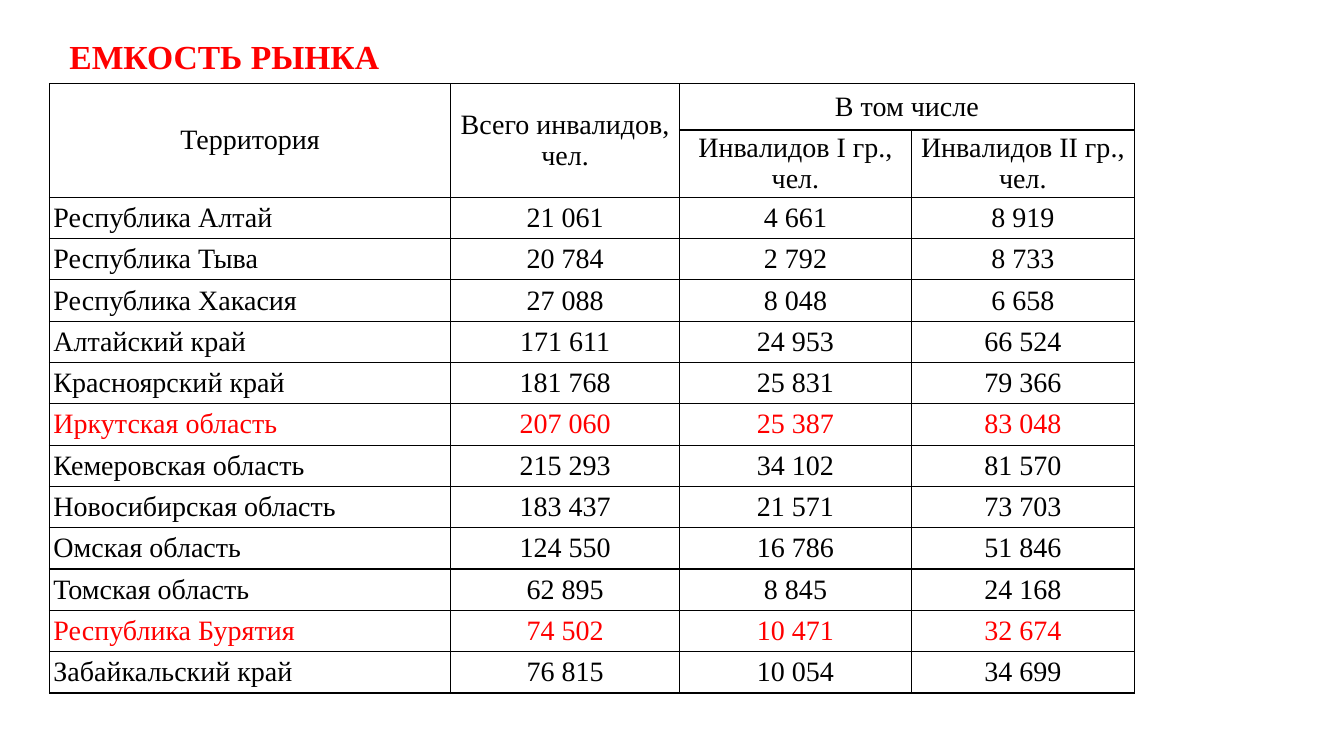
"""Build the market capacity slide: a title and a table of disabled people by territory."""
from lxml.etree import SubElement
from pptx import Presentation
from pptx.dml.color import RGBColor
from pptx.enum.text import MSO_ANCHOR as ANCHOR, PP_ALIGN as ALIGN
from pptx.oxml.ns import qn
from pptx.util import Inches, Pt

RED = RGBColor(0xFF, 0x00, 0x00)
BLACK = RGBColor(0x00, 0x00, 0x00)
FONT = "Times New Roman"

COL_WIDTHS = [3.98, 2.27, 2.3, 2.21]
HEADER_HEIGHTS = [0.46, 0.65]
ROW_HEIGHT = 0.41
HEADERS = [
    ["Территория", "Всего инвалидов, чел.", "В том числе", ""],
    ["", "", "Инвалидов I гр., чел.", "Инвалидов II гр., чел."],
]
TERRITORIES = [
    ("Республика Алтай", 21061, 4661, 8919),
    ("Республика Тыва", 20784, 2792, 8733),
    ("Республика Хакасия", 27088, 8048, 6658),
    ("Алтайский край", 171611, 24953, 66524),
    ("Красноярский край", 181768, 25831, 79366),
    ("Иркутская область", 207060, 25387, 83048),
    ("Кемеровская область", 215293, 34102, 81570),
    ("Новосибирская область", 183437, 21571, 73703),
    ("Омская область", 124550, 16786, 51846),
    ("Томская область", 62895, 8845, 24168),
    ("Республика Бурятия", 74502, 10471, 32674),
    ("Забайкальский край", 76815, 10054, 34699),
]
HIGHLIGHTED = {"Иркутская область", "Республика Бурятия"}


def set_font(p, size, color, bold=False):
    p.font.name = FONT
    p.font.size = Pt(size)
    p.font.bold = bold
    p.font.color.rgb = color


def add_borders(cell):
    tc_pr = cell._tc.get_or_add_tcPr()
    for side in ("a:lnL", "a:lnR", "a:lnT", "a:lnB"):
        ln = SubElement(tc_pr, qn(side), w=str(Pt(1)))
        fill = SubElement(ln, qn("a:solidFill"))
        SubElement(fill, qn("a:srgbClr"), val=str(BLACK))


prs = Presentation()
prs.slide_width = Inches(13.33)
prs.slide_height = Inches(7.5)
s = prs.slides.add_slide(prs.slide_layouts[6])

title = s.shapes.add_textbox(Inches(0.59), Inches(0.29), Inches(12.14), Inches(0.54))
tf = title.text_frame
tf.word_wrap = True
tf.vertical_anchor = ANCHOR.MIDDLE
p = tf.paragraphs[0]
p.text = "ЕМКОСТЬ РЫНКА"
set_font(p, 24, RED, bold=True)

rows = HEADERS + [
    [name] + [f"{n:,}".replace(",", " ") for n in counts]
    for name, *counts in TERRITORIES
]
heights = HEADER_HEIGHTS + [ROW_HEIGHT] * len(TERRITORIES)
table = s.shapes.add_table(
    len(rows), len(COL_WIDTHS), Inches(0.49), Inches(0.83),
    Inches(sum(COL_WIDTHS)), Inches(sum(heights)),
).table
table.first_row = False
table.horz_banding = False
for column, width in zip(table.columns, COL_WIDTHS):
    column.width = Inches(width)

for i, (values, height) in enumerate(zip(rows, heights)):
    table.rows[i].height = Inches(height)
    color = RED if values[0] in HIGHLIGHTED else BLACK
    for j, value in enumerate(values):
        cell = table.cell(i, j)
        cell.margin_left = cell.margin_right = Inches(0.04)
        cell.margin_top = cell.margin_bottom = 0
        cell.vertical_anchor = ANCHOR.MIDDLE
        add_borders(cell)
        cell.fill.background()
        p = cell.text_frame.paragraphs[0]
        p.text = value
        is_name = j == 0 and i >= len(HEADERS)
        p.alignment = ALIGN.JUSTIFY if is_name else ALIGN.CENTER
        set_font(p, 20, color)

table.cell(0, 0).merge(table.cell(1, 0))
table.cell(0, 1).merge(table.cell(1, 1))
table.cell(0, 2).merge(table.cell(0, 3))

prs.save("out.pptx")
